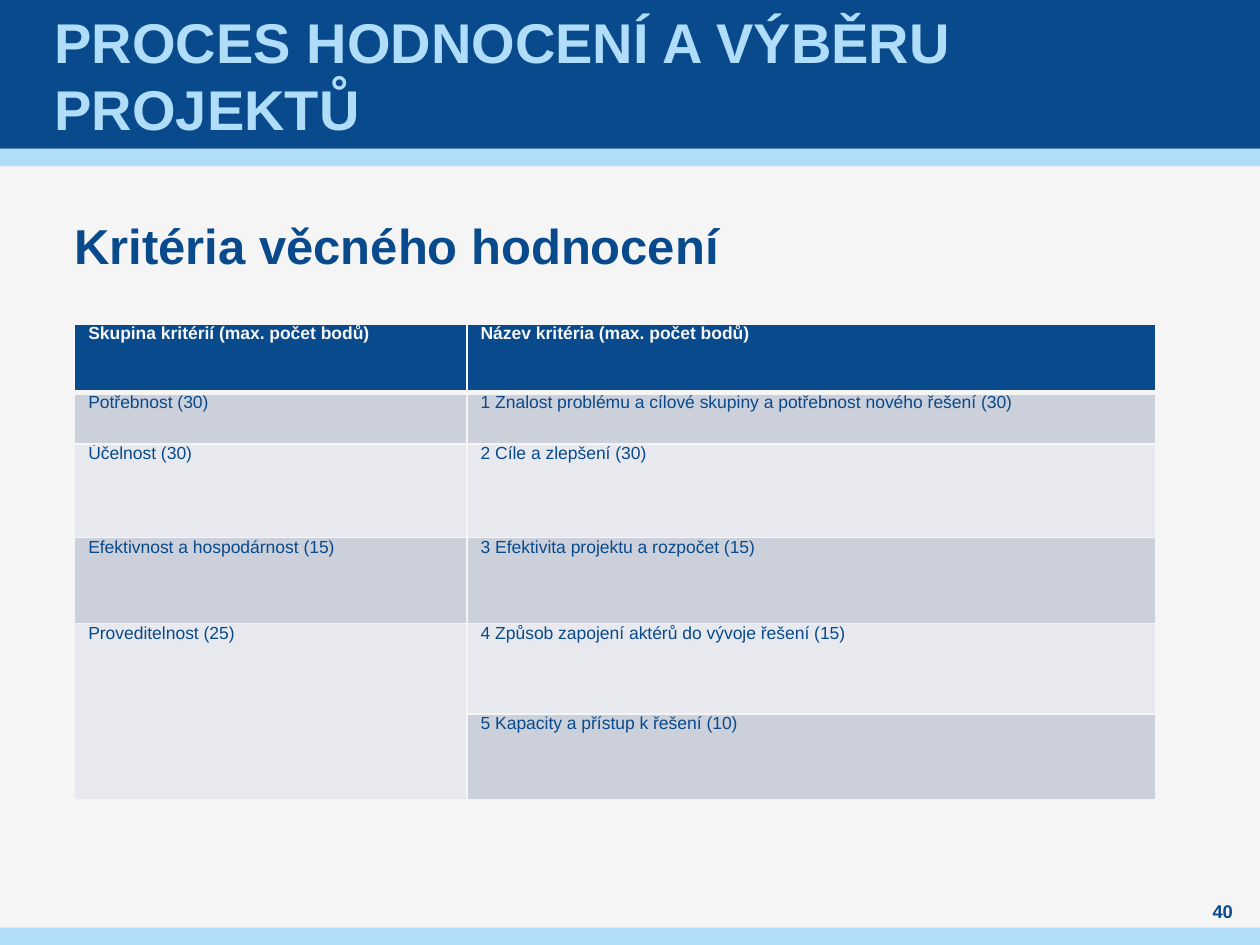
from lxml import etree
from pptx import Presentation
from pptx.dml.color import RGBColor
from pptx.enum.shapes import MSO_SHAPE
from pptx.enum.text import MSO_ANCHOR, MSO_AUTO_SIZE, PP_ALIGN
from pptx.oxml.ns import qn
from pptx.util import Cm, Pt

RECTANGLE = MSO_SHAPE.RECTANGLE
TOP, MIDDLE = MSO_ANCHOR.TOP, MSO_ANCHOR.MIDDLE
LEFT, CENTER = PP_ALIGN.LEFT, PP_ALIGN.CENTER
NO_AUTOFIT = MSO_AUTO_SIZE.NONE

COLORS = {
    "paper": "F5F5F5",
    "navy": "084A8B",
    "sky": "AFDDFA",
    "dark_band": "CCD0DA",
    "light_band": "E7E9EE",
}
FONT = "Arial"

HEADER = ("Skupina kritérií (max. počet bodů)", "Název kritéria (max. počet bodů)")
CRITERIA = [
    ("Potřebnost (30)",
     "1 Znalost problému a cílové skupiny a potřebnost nového řešení (30)"),
    ("Účelnost (30)", "2 Cíle a zlepšení (30)"),
    ("Efektivnost a hospodárnost (15)", "3 Efektivita projektu a rozpočet (15)"),
    ("Proveditelnost (25)", "4 Způsob zapojení aktérů do vývoje řešení (15)"),
    ("", "5 Kapacity a přístup k řešení (10)"),
]
COLUMN_WIDTHS = (7.91, 13.88)
ROW_HEIGHTS = (1.38, 1.04, 1.89, 1.73, 1.82, 1.74)


def rgb(name):
    return RGBColor.from_string(COLORS[name])


def write_text(frame, text, size, color="navy", bold=True, align=LEFT,
               line_spacing=None, space=0):
    para = frame.paragraphs[0]
    para.alignment = align
    para.line_spacing = line_spacing
    para.space_before = para.space_after = Pt(space)
    span = para.add_run()
    span.text = text
    span.font.name = FONT
    span.font.size = Pt(size)
    span.font.bold = bold
    span.font.color.rgb = rgb(color)
    return para


def set_frame(frame, anchor=TOP, side_margin=0):
    frame.word_wrap = True
    frame.auto_size = NO_AUTOFIT
    frame.vertical_anchor = anchor
    frame.margin_left = frame.margin_right = Cm(side_margin)
    frame.margin_top = frame.margin_bottom = 0


def add_band(slide, top, height, color):
    """Draw a plain stripe across the full slide width."""
    band = slide.shapes.add_shape(RECTANGLE, 0, Cm(top), Cm(25.4), Cm(height))
    band.shadow.inherit = False
    band.fill.solid()
    band.fill.fore_color.rgb = rgb(color)
    band.line.fill.background()


def set_title(slide, text):
    title = slide.shapes.title
    title.left, title.top, title.width, title.height = Cm(1), 0, Cm(23.4), Cm(3)
    set_frame(title.text_frame, MIDDLE, side_margin=0.1)
    write_text(title.text_frame, text, 32, "sky")
    title.element.getparent().append(title.element)  # in front of the bands


def add_text(slide, text, left, top, width, height, anchor=TOP, **text_format):
    box = slide.shapes.add_textbox(Cm(left), Cm(top), Cm(width), Cm(height))
    set_frame(box.text_frame, anchor)
    write_text(box.text_frame, text, **text_format)


def set_borders(cell, top=1, bottom=1):
    properties = cell._tc.get_or_add_tcPr()
    for side, width in (("L", 1), ("R", 1), ("T", top), ("B", bottom)):
        line = etree.SubElement(properties, qn(f"a:ln{side}"), w=str(Pt(width)))
        fill = etree.SubElement(line, qn("a:solidFill"))
        etree.SubElement(fill, qn("a:srgbClr"), val=COLORS["paper"])


def format_cell(cell, text, row, fill):
    is_header = row == 0
    set_borders(cell, top=3 if row == 1 else 1, bottom=3 if is_header else 1)
    cell.fill.solid()
    cell.fill.fore_color.rgb = rgb(fill)
    cell.margin_left = cell.margin_right = Cm(0.18)
    cell.margin_top = cell.margin_bottom = 0
    para = write_text(cell.text_frame, text, 10, "paper" if is_header else "navy",
                      bold=is_header, space=3)
    para._p.get_or_add_pPr().set("marL", str(Cm(0.1)))


def add_criteria_table(slide, left, top):
    rows = [HEADER, *CRITERIA]
    table = slide.shapes.add_table(
        len(rows), len(HEADER), Cm(left), Cm(top),
        Cm(sum(COLUMN_WIDTHS)), Cm(sum(ROW_HEIGHTS))).table
    for column, width in zip(table.columns, COLUMN_WIDTHS):
        column.width = Cm(width)
    for index, (texts, height) in enumerate(zip(rows, ROW_HEIGHTS)):
        table.rows[index].height = Cm(height)
        band = "dark_band" if index % 2 else "light_band"
        for cell, text in zip(table.rows[index].cells, texts):
            format_cell(cell, text, index, band if index else "navy")
    last = len(rows) - 1
    table.cell(last - 1, 0).merge(table.cell(last, 0))


def main():
    deck = Presentation()
    deck.slide_width, deck.slide_height = Cm(25.4), Cm(19.05)
    slide = deck.slides.add_slide(deck.slide_layouts[5])
    slide.background.fill.solid()
    slide.background.fill.fore_color.rgb = rgb("paper")

    add_band(slide, 3, 0.35, "sky")
    add_band(slide, 0, 3, "navy")
    add_band(slide, 18.7, 0.35, "sky")
    set_title(slide, "PROCES HODNOCENÍ A VÝBĚRU PROJEKTŮ")
    add_text(slide, "Kritéria věcného hodnocení", 1.5, 4.52, 22.4, 12.47,
             size=28, line_spacing=Pt(28.8), space=6)
    add_text(slide, "40", 24, 18.11, 1.3, 0.5, anchor=MIDDLE,
             size=10.5, align=CENTER)
    add_criteria_table(slide, 1.5, 6.53)
    deck.save("out.pptx")


if __name__ == "__main__":
    main()
